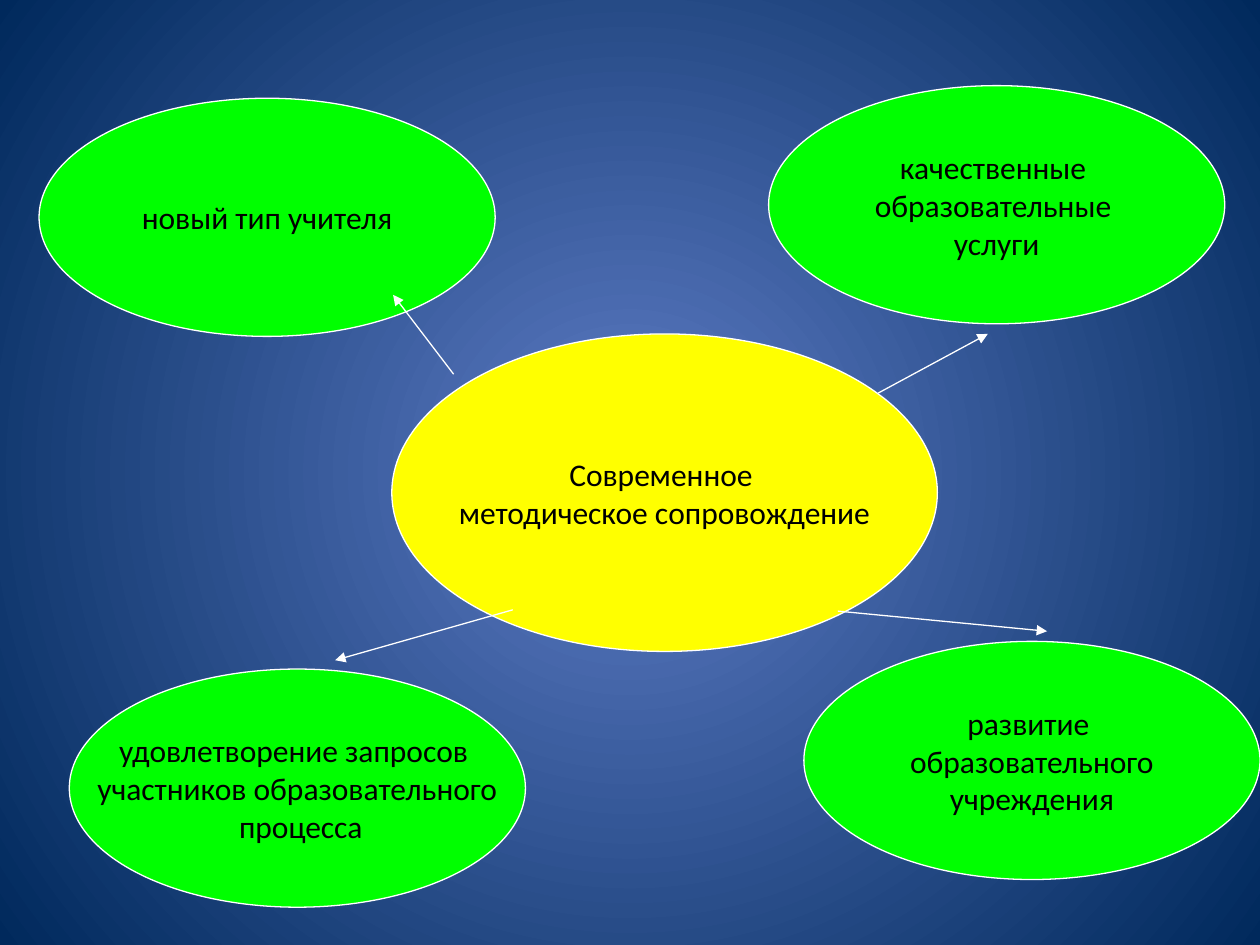
from lxml.etree import SubElement
from pptx import Presentation
from pptx.dml.color import RGBColor
from pptx.enum.shapes import MSO_CONNECTOR, MSO_SHAPE
from pptx.enum.text import MSO_ANCHOR, PP_ALIGN
from pptx.oxml.ns import qn
from pptx.util import Inches, Pt

COLORS = {
    "center": "5E7CC5",
    "edge": "00295C",
    "main": "FFFF00",
    "goal": "00FF00",
    "line": "FFFFFF",
    "text": "000000",
}
MAIN_SIZE = (4.33, 2.52)
GOAL_SIZE = (3.62, 1.89)


def rgb(name):
    return RGBColor.from_string(COLORS[name])


prs = Presentation()
prs.slide_width, prs.slide_height = Inches(10), Inches(7.5)
s = prs.slides.add_slide(prs.slide_layouts[6])

fill = s.background.fill
fill.gradient()
for stop, name, position in zip(fill.gradient_stops, ("center", "edge"), (0, 1)):
    stop.color.rgb = rgb(name)
    stop.position = position
grad = s.element.find(".//" + qn("a:gradFill"))
grad.remove(grad.find(qn("a:lin")))
path = SubElement(grad, qn("a:path"), path="circle")
SubElement(path, qn("a:fillToRect"), l="50000", t="50000", r="50000", b="50000")

ellipses = [
    (3.11, 2.65, MAIN_SIZE, "main", ["Современное ", "методическое сопровождение"]),
    (0.31, 0.78, GOAL_SIZE, "goal", ["новый тип учителя"]),
    (6.1, 0.68, GOAL_SIZE, "goal", ["качественные ", "образовательные ", "услуги"]),
    (0.55, 5.31, GOAL_SIZE, "goal",
     ["удовлетворение запросов ", "участников образовательного", " процесса"]),
    (6.38, 5.09, GOAL_SIZE, "goal", ["развитие ", "образовательного", "учреждения"]),
]
for left, top, (width, height), color, lines in ellipses:
    sp = s.shapes.add_shape(MSO_SHAPE.OVAL, Inches(left), Inches(top),
                            Inches(width), Inches(height))
    sp.shadow.inherit = False
    sp.fill.solid()
    sp.fill.fore_color.rgb = rgb(color)
    sp.line.color.rgb = rgb("line")
    sp.line.width = Pt(0.75)
    tf = sp.text_frame
    tf.word_wrap = False
    tf.vertical_anchor = MSO_ANCHOR.MIDDLE
    tf.text = "\n".join(lines)
    for p in tf.paragraphs:
        p.alignment = PP_ALIGN.CENTER
        p.font.name = "Calibri"
        p.font.size = Pt(18)
        p.font.color.rgb = rgb("text")

arrows = [
    (3.6, 2.97, 3.12, 2.34),
    (6.97, 3.12, 7.84, 2.65),
    (4.07, 4.84, 2.66, 5.24),
    (6.65, 4.85, 8.31, 5.01),
]
for points in arrows:
    arrow = s.shapes.add_connector(MSO_CONNECTOR.STRAIGHT, *map(Inches, points))
    arrow.line.color.rgb = rgb("line")
    arrow.line.width = Pt(0.75)
    SubElement(arrow.line._get_or_add_ln(), qn("a:tailEnd"), type="triangle")
    SubElement(arrow.element.spPr, qn("a:effectLst"))

prs.save("out.pptx")
